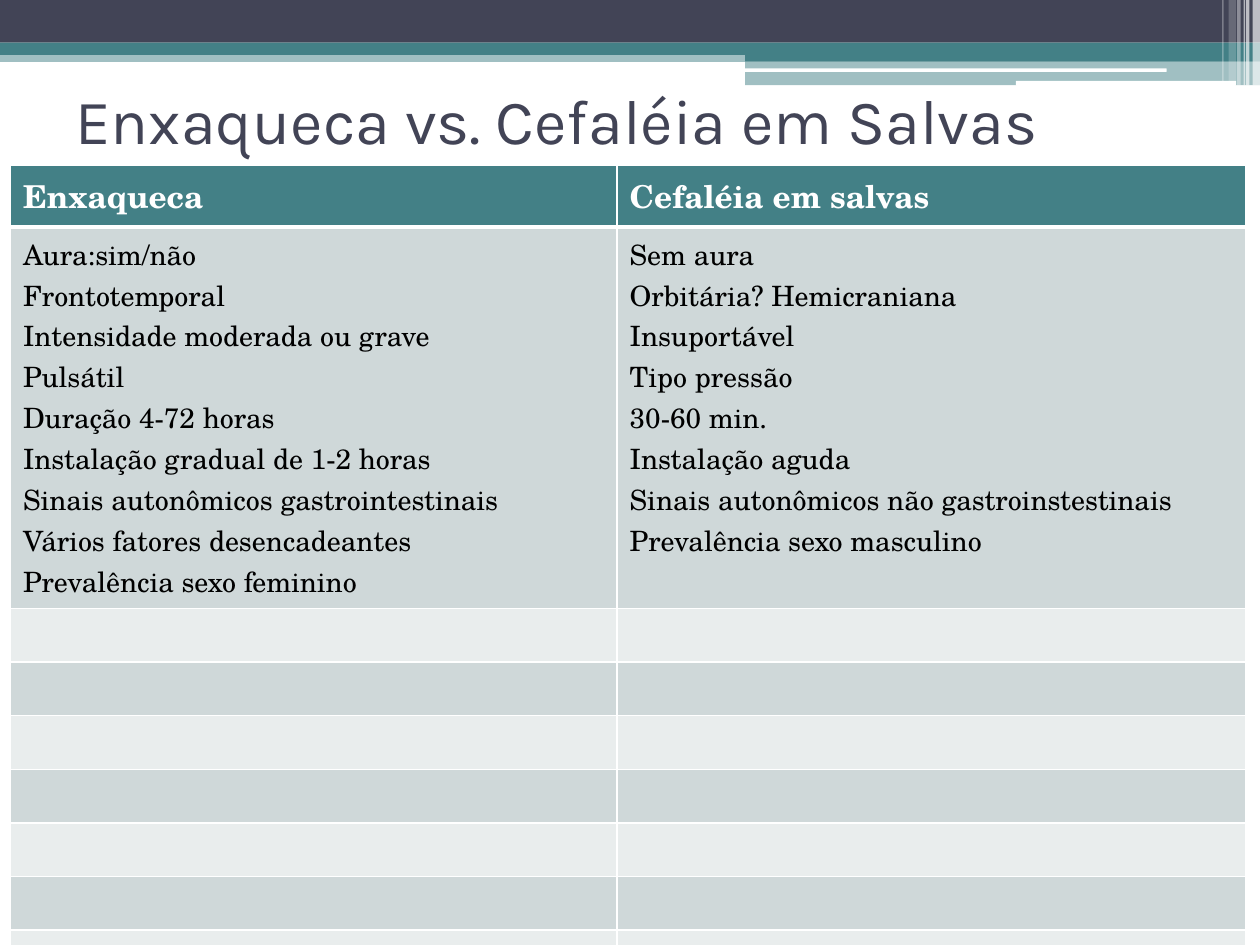
from dataclasses import dataclass

from lxml import etree
from pptx import Presentation
from pptx.dml.color import RGBColor
from pptx.enum.shapes import MSO_SHAPE
from pptx.enum.text import MSO_ANCHOR, PP_ALIGN
from pptx.oxml.ns import qn
from pptx.util import Cm, Pt

RECT = MSO_SHAPE.RECTANGLE
ROUNDED = MSO_SHAPE.ROUNDED_RECTANGLE
MIDDLE = MSO_ANCHOR.MIDDLE
LEFT = PP_ALIGN.LEFT


@dataclass(frozen=True)
class Theme:
    teal: str = "438086"
    navy: str = "424456"
    white: str = "FFFFFF"
    black: str = "000000"
    dark_row: str = "CFD8D9"
    light_row: str = "E9EDED"
    title_font: str = "Karla"
    body_font: str = "TeX Gyre Schola"
    title_size: int = 36
    header_size: int = 18
    body_size: int = 16
    thin: int = 1
    thick: int = 3


@dataclass(frozen=True)
class Bar:
    left: float
    top: float
    width: float
    height: float
    color: str
    opacity: int = 100
    rounded: bool = False


THEME = Theme()
BARS = [
    Bar(0, 1.02, 25.4, 0.23, THEME.teal, 50),
    Bar(0, 0, 25.4, 0.86, THEME.navy),
    Bar(0, 0.86, 25.4, 0.25, THEME.teal),
    Bar(15.02, 0.98, 10.38, 0.25, THEME.teal),
    Bar(15.02, 1.23, 10.38, 0.49, THEME.teal, 50),
    Bar(15.01, 1.38, 8.51, 0.07, THEME.white, rounded=True),
    Bar(20.48, 1.63, 4.44, 0.1, THEME.white, rounded=True),
    Bar(25.25, 0, 0.15, 1.73, THEME.white, 65),
    Bar(25.12, 0, 0.07, 1.73, THEME.white, 65),
    Bar(25.07, 0, 0.03, 1.73, THEME.white, 60),
    Bar(24.94, 0, 0.07, 1.73, THEME.white, 40),
    Bar(24.77, 0, 0.15, 1.63, THEME.white, 20),
    Bar(24.64, 0, 0.03, 1.63, THEME.white, 30),
]

HEADERS = ["Enxaqueca", "Cefaléia em salvas"]
FEATURES = [
    """Aura:sim/não
Frontotemporal
Intensidade moderada ou grave
Pulsátil
Duração 4-72 horas
Instalação gradual de 1-2 horas
Sinais autonômicos gastrointestinais
Vários fatores desencadeantes
Prevalência sexo feminino""",
    """Sem aura
Orbitária? Hemicraniana
Insuportável
Tipo pressão
30-60 min.
Instalação aguda
Sinais autonômicos não gastroinstestinais
Prevalência sexo masculino""",
]
EMPTY_ROWS = 8
COLUMN_WIDTHS = [12.23, 12.67]
ROW_HEIGHTS = [1.02, 7.16] + [0.91] * EMPTY_ROWS


def write(tf, text: str, *, font: str, size: int, color: str, bold: bool = False) -> None:
    for i, line in enumerate(text.split("\n")):
        p = tf.paragraphs[0] if i == 0 else tf.add_paragraph()
        p.alignment = LEFT
        if not line:
            end = etree.SubElement(p._p, qn("a:endParaRPr"), sz=str(size * 100))
            etree.SubElement(end, qn("a:latin"), typeface=font)
            continue
        r = p.add_run()
        r.text = line
        r.font.name = font
        r.font.size = Pt(size)
        r.font.bold = bold
        r.font.color.rgb = RGBColor.from_string(color)


def draw_bar(s, bar: Bar) -> None:
    sp = s.shapes.add_shape(
        ROUNDED if bar.rounded else RECT,
        Cm(bar.left), Cm(bar.top), Cm(bar.width), Cm(bar.height),
    )
    sp.shadow.inherit = False
    sp.line.fill.background()
    sp.fill.solid()
    sp.fill.fore_color.rgb = RGBColor.from_string(bar.color)
    if bar.opacity < 100:
        color = sp.element.spPr.find(qn("a:solidFill"))[0]
        etree.SubElement(color, qn("a:alpha"), val=str(bar.opacity * 1000))


def draw_title(s, text: str) -> None:
    title = s.shapes.title
    title.left, title.top, title.width, title.height = Cm(1.27), Cm(0.91), Cm(22.86), Cm(2.97)
    title.text_frame.vertical_anchor = MIDDLE
    title.text_frame.word_wrap = True
    write(title.text_frame, text, font=THEME.title_font, size=THEME.title_size, color=THEME.navy)
    title.element.getparent().append(title.element)


def format_cell(cell, fill: str, top: int, bottom: int) -> None:
    tcPr = cell._tc.get_or_add_tcPr()
    for side, width in zip("LRTB", (THEME.thin, THEME.thin, top, bottom)):
        ln = etree.SubElement(tcPr, qn(f"a:ln{side}"), w=str(Pt(width)))
        solid = etree.SubElement(ln, qn("a:solidFill"))
        etree.SubElement(solid, qn("a:srgbClr"), val=THEME.white)
    cell.fill.solid()
    cell.fill.fore_color.rgb = RGBColor.from_string(fill)


def draw_table(s) -> None:
    rows = [HEADERS, FEATURES] + [["", ""]] * EMPTY_ROWS
    table = s.shapes.add_table(
        len(rows), len(HEADERS), Cm(0.21), Cm(3.34),
        Cm(sum(COLUMN_WIDTHS)), Cm(sum(ROW_HEIGHTS)),
    ).table
    table.horz_banding = False
    for column, width in zip(table.columns, COLUMN_WIDTHS):
        column.width = Cm(width)
    for row, height in zip(table.rows, ROW_HEIGHTS):
        row.height = Cm(height)
    for i, texts in enumerate(rows):
        header = i == 0
        fill = THEME.teal if header else THEME.dark_row if i % 2 else THEME.light_row
        for j, text in enumerate(texts):
            cell = table.cell(i, j)
            format_cell(
                cell, fill,
                top=THEME.thick if i == 1 else THEME.thin,
                bottom=THEME.thick if header else THEME.thin,
            )
            write(
                cell.text_frame, text, font=THEME.body_font, bold=header,
                size=THEME.header_size if header else THEME.body_size,
                color=THEME.white if header else THEME.black,
            )


def main() -> None:
    prs = Presentation()
    prs.slide_width, prs.slide_height = Cm(25.4), Cm(19.05)
    s = prs.slides.add_slide(prs.slide_layouts[5])
    for bar in BARS:
        draw_bar(s, bar)
    draw_title(s, "Enxaqueca vs. Cefaléia em Salvas")
    draw_table(s)
    prs.save("out.pptx")


if __name__ == "__main__":
    main()
